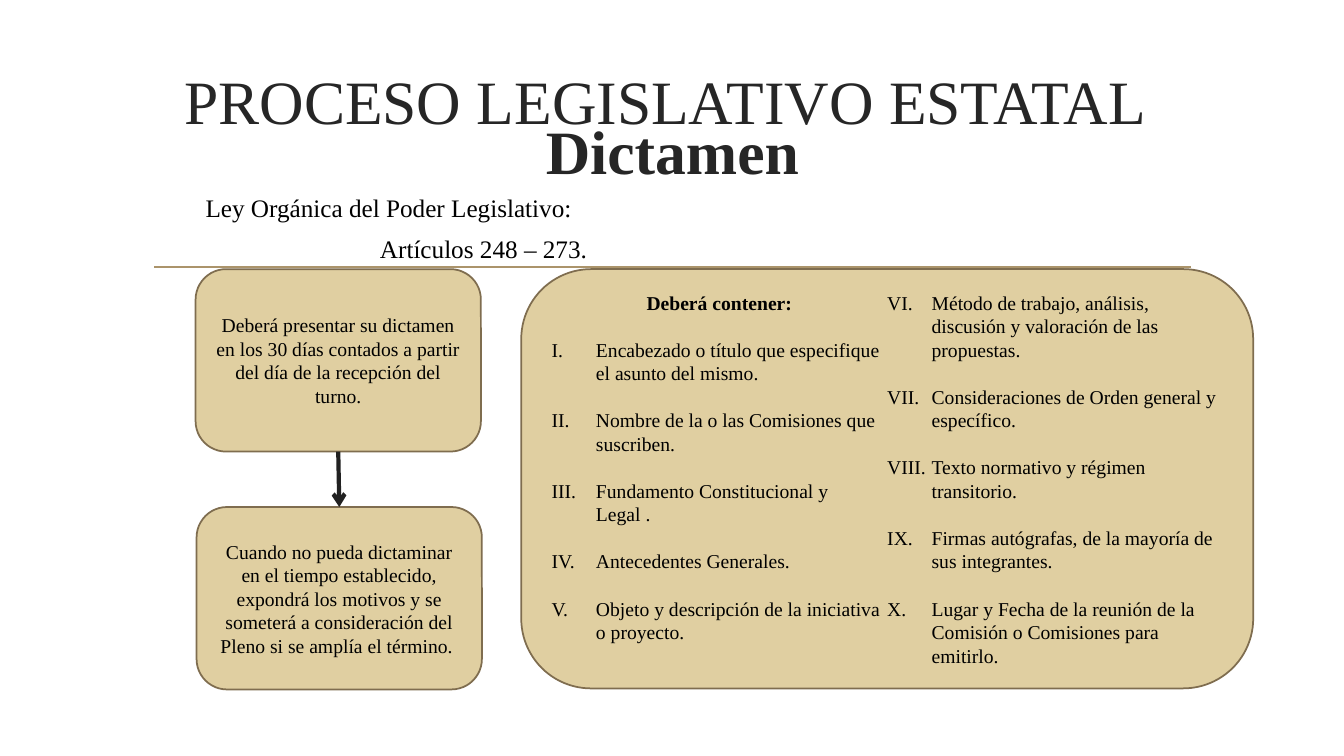
from lxml import etree
from pptx import Presentation
from pptx.dml.color import RGBColor
from pptx.enum.shapes import MSO_CONNECTOR, MSO_SHAPE
from pptx.enum.text import MSO_ANCHOR, PP_ALIGN
from pptx.oxml.ns import qn
from pptx.util import Inches, Pt

LEFT, CENTER = PP_ALIGN.LEFT, PP_ALIGN.CENTER
TOP, MIDDLE = MSO_ANCHOR.TOP, MSO_ANCHOR.MIDDLE
ROUNDED = MSO_SHAPE.ROUNDED_RECTANGLE
STRAIGHT = MSO_CONNECTOR.STRAIGHT

FONT = "Times New Roman"
BLACK = RGBColor(0x00, 0x00, 0x00)
TITLE_GRAY = RGBColor(0x26, 0x26, 0x26)
ARROW_GRAY = RGBColor(0x21, 0x21, 0x21)
SAND = RGBColor(0xE0, 0xCF, 0xA1)
BROWN = RGBColor(0x7F, 0x6D, 0x4F)
RULE_TAN = RGBColor(0xAB, 0x94, 0x6B)

LINE_GAP = 16.8
NUMBER_INDENT = Inches(0.44)

DEADLINES = [
    "Deberá presentar su dictamen en los 30 días contados a partir del día "
    "de la recepción del turno.",
    "Cuando no pueda dictaminar en el tiempo establecido, expondrá los motivos "
    "y se someterá a consideración del Pleno si se amplía el término. ",
]
CONTENTS = [
    "Encabezado o título que especifique el asunto del mismo.",
    "Nombre de la o las Comisiones que suscriben.",
    "Fundamento Constitucional y Legal .",
    "Antecedentes Generales.",
    "Objeto y descripción de la iniciativa o proyecto.",
    "Método de trabajo, análisis, discusión y valoración de las propuestas.",
    "Consideraciones de Orden general y específico.",
    "Texto normativo y régimen transitorio.",
    "Firmas autógrafas, de la mayoría de sus integrantes.",
    "Lugar y Fecha de la reunión de la Comisión o Comisiones para emitirlo.",
]


def write(paragraph, text, size=14, color=BLACK, bold=False, align=CENTER,
          numbered=False, before=0):
    properties = paragraph._p.get_or_add_pPr()
    if numbered:
        properties.set("marL", str(NUMBER_INDENT))
        properties.set("indent", str(-NUMBER_INDENT))
        number = etree.SubElement(properties, qn("a:buAutoNum"))
        number.set("type", "romanUcPeriod")
    paragraph.alignment = align
    paragraph.space_before = Pt(before)
    run = paragraph.add_run()
    run.text = text
    run.font.name = FONT
    run.font.size = Pt(size)
    run.font.bold = bold
    run.font.color.rgb = color


def prepare_frame(shape, anchor):
    frame = shape.text_frame
    frame.word_wrap = True
    frame.vertical_anchor = anchor
    return frame


def add_text(slide, box, text, anchor=TOP, **text_format):
    shape = slide.shapes.add_textbox(*map(Inches, box))
    write(prepare_frame(shape, anchor).paragraphs[0], text, **text_format)


def add_panel(slide, box):
    panel = slide.shapes.add_shape(ROUNDED, *map(Inches, box))
    panel.shadow.inherit = False
    panel.fill.solid()
    panel.fill.fore_color.rgb = SAND
    panel.line.color.rgb = BROWN
    panel.line.width = Pt(1.25)
    return panel, prepare_frame(panel, MIDDLE)


def add_line(slide, start, end, color, width, arrow=False):
    line = slide.shapes.add_connector(STRAIGHT, *map(Inches, start + end))
    line.line.color.rgb = color
    line.line.width = Pt(width)
    if arrow:
        etree.SubElement(line.line._get_or_add_ln(), qn("a:tailEnd")).set("type", "arrow")
    etree.SubElement(line._element.spPr, qn("a:effectLst"))


def build_heading(slide, left, top, width):
    # Heading line and title below it
    height, step = 1.43, 0.49
    add_text(slide, (left, top, width, height), "PROCESO LEGISLATIVO ESTATAL ",
             anchor=MIDDLE, size=44, color=TITLE_GRAY)
    title = slide.shapes.title
    title.left, title.top = Inches(left), Inches(top + step)
    title.width, title.height = Inches(width), Inches(height)
    write(prepare_frame(title, MIDDLE).paragraphs[0], "Dictamen",
          size=44, color=TITLE_GRAY, bold=True)
    # Legal reference
    add_text(slide, (left + 0.52, top + 1.58, 4.15, 0.4),
             "Ley Orgánica del Poder Legislativo:", size=18, align=LEFT)
    add_text(slide, (left + 2.25, top + 1.99, 2.99, 0.4),
             "Artículos 248 – 273.", size=18, align=LEFT)


def build_deadlines(slide, left, top, width, height):
    # Two panels joined by an arrow
    panel_height, shift = 1.81, 0.01
    second_top = top + height - panel_height
    corners = [(left, top), (left + shift, second_top)]
    for corner, text in zip(corners, DEADLINES):
        _, frame = add_panel(slide, corner + (width, panel_height))
        write(frame.paragraphs[0], text)
    center = left + width / 2
    add_line(slide, (center, top + panel_height), (center + shift, second_top),
             ARROW_GRAY, 3, arrow=True)


def build_contents(slide, *box):
    # Numbered list in two columns
    panel, frame = add_panel(slide, box)
    body = panel.text_frame._txBody.bodyPr
    body.set("numCol", "2")
    body.set("spcCol", "0")
    write(frame.paragraphs[0], "Deberá contener:", bold=True)
    for item in CONTENTS:
        write(frame.add_paragraph(), item, align=LEFT, numbered=True, before=LINE_GAP)


def main():
    presentation = Presentation()
    presentation.slide_width = Inches(13.33)
    presentation.slide_height = Inches(7.5)
    slide = presentation.slides.add_slide(presentation.slide_layouts[5])
    add_line(slide, (1.53, 2.65), (11.81, 2.65), RULE_TAN, 1.25)
    build_heading(slide, 1.42, 0.28, 10.5)
    build_deadlines(slide, 1.94, 2.67, 2.83, 4.17)
    build_contents(slide, 5.17, 2.67, 7.26, 4.16)
    presentation.save("out.pptx")


if __name__ == "__main__":
    main()
